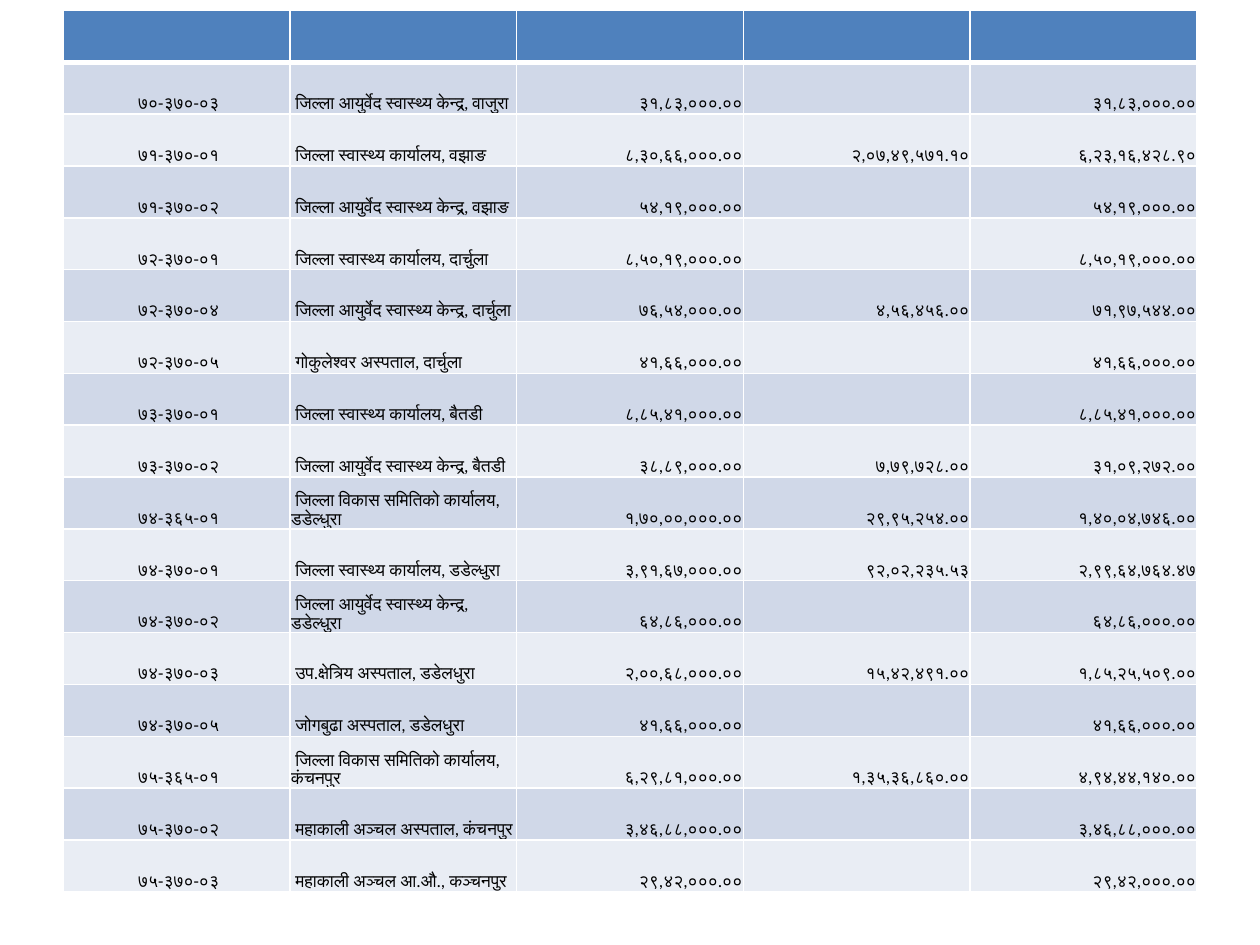
from lxml.etree import SubElement
from pptx import Presentation
from pptx.dml.color import RGBColor
from pptx.enum.text import MSO_VERTICAL_ANCHOR as Anchor, PP_PARAGRAPH_ALIGNMENT as Align
from pptx.oxml.ns import qn
from pptx.util import Pt

WHITE = RGBColor(0xFF, 0xFF, 0xFF)
BLACK = RGBColor(0x00, 0x00, 0x00)
HEADER_BLUE = RGBColor(0x4F, 0x81, 0xBD)
BAND_DARK = RGBColor(0xD0, 0xD8, 0xE8)
BAND_LIGHT = RGBColor(0xE9, 0xED, 0xF4)

NO_BREAK_SPACE = " "
ALIGNMENTS = [Align.CENTER, Align.LEFT, Align.RIGHT, Align.RIGHT, Align.RIGHT]
OFFICE_BUDGETS = [
    ("७०-३७०-०३", "जिल्ला आयुर्वेद स्वास्थ्य केन्द्र, वाजुरा", "३१,८३,०००.००", "", "३१,८३,०००.००"),
    ("७१-३७०-०१", "जिल्ला स्वास्थ्य कार्यालय, वझाङ", "८,३०,६६,०००.००", "२,०७,४९,५७१.१०", "६,२३,१६,४२८.९०"),
    ("७१-३७०-०२", "जिल्ला आयुर्वेद स्वास्थ्य केन्द्र, वझाङ", "५४,१९,०००.००", "", "५४,१९,०००.००"),
    ("७२-३७०-०१", "जिल्ला स्वास्थ्य कार्यालय, दार्चुला", "८,५०,१९,०००.००", "", "८,५०,१९,०००.००"),
    ("७२-३७०-०४", "जिल्ला आयुर्वेद स्वास्थ्य केन्द्र, दार्चुला", "७६,५४,०००.००", "४,५६,४५६.००", "७१,९७,५४४.००"),
    ("७२-३७०-०५", "गोकुलेश्वर अस्पताल, दार्चुला", "४१,६६,०००.००", "", "४१,६६,०००.००"),
    ("७३-३७०-०१", "जिल्ला स्वास्थ्य कार्यालय, बैतडी", "८,८५,४१,०००.००", "", "८,८५,४१,०००.००"),
    ("७३-३७०-०२", "जिल्ला आयुर्वेद स्वास्थ्य केन्द्र, बैतडी", "३८,८९,०००.००", "७,७९,७२८.००", "३१,०९,२७२.००"),
    ("७४-३६५-०१", "जिल्ला विकास समितिको कार्यालय, डडेल्धुरा", "१,७०,००,०००.००", "२९,९५,२५४.००", "१,४०,०४,७४६.००"),
    ("७४-३७०-०१", "जिल्ला स्वास्थ्य कार्यालय, डडेल्धुरा", "३,९१,६७,०००.००", "९२,०२,२३५.५३", "२,९९,६४,७६४.४७"),
    ("७४-३७०-०२", "जिल्ला आयुर्वेद स्वास्थ्य केन्द्र, डडेल्धुरा", "६४,८६,०००.००", "", "६४,८६,०००.००"),
    ("७४-३७०-०३", "उप.क्षेत्रिय अस्पताल, डडेलधुरा", "२,००,६८,०००.००", "१५,४२,४९१.००", "१,८५,२५,५०९.००"),
    ("७४-३७०-०५", "जोगबुढा अस्पताल, डडेलधुरा", "४१,६६,०००.००", "", "४१,६६,०००.००"),
    ("७५-३६५-०१", "जिल्ला विकास समितिको कार्यालय, कंचनपुर", "६,२९,८१,०००.००", "१,३५,३६,८६०.००", "४,९४,४४,१४०.००"),
    ("७५-३७०-०२", "महाकाली अञ्चल अस्पताल, कंचनपुर", "३,४६,८८,०००.००", "", "३,४६,८८,०००.००"),
    ("७५-३७०-०३", "महाकाली अञ्चल आ.औ., कञ्चनपुर", "२९,४२,०००.००", "", "२९,४२,०००.००"),
]


class BudgetSlide:
    font_format = {"name": "Calibri", "size": Pt(10), "bold": False}
    cell_format = {
        "margin_left": Pt(0.7),
        "margin_top": Pt(0.7),
        "margin_right": Pt(0.7),
        "margin_bottom": Pt(0),
        "vertical_anchor": Anchor.BOTTOM,
    }

    def __init__(self, presentation):
        self.slide = presentation.slides.add_slide(presentation.slide_layouts[6])

    def add_table(self, rows, left, top, width, height):
        frame = self.slide.shapes.add_table(len(rows), len(rows[0]), left, top, width, height)
        table = frame.table
        for row in table.rows:
            row.height = int(height / len(rows))
        for row_index, values in enumerate(rows):
            for column_index, value in enumerate(values):
                cell = table.cell(row_index, column_index)
                self.style_cell(cell, row_index)
                if value:
                    self.write_text(cell, value, ALIGNMENTS[column_index])

    def style_cell(self, cell, row_index):
        for name, value in self.cell_format.items():
            setattr(cell, name, value)
        top_width = 3 if row_index == 1 else 1
        bottom_width = 3 if row_index == 0 else 1
        self.add_borders(cell, {"lnL": 1, "lnR": 1, "lnT": top_width, "lnB": bottom_width})
        band = BAND_DARK if row_index % 2 else BAND_LIGHT
        cell.fill.solid()
        cell.fill.fore_color.rgb = band if row_index else HEADER_BLUE

    def add_borders(self, cell, widths):
        properties = cell._tc.get_or_add_tcPr()
        for side, width in widths.items():
            line = SubElement(properties, qn(f"a:{side}"), w=str(Pt(width)))
            fill = SubElement(line, qn("a:solidFill"))
            SubElement(fill, qn("a:srgbClr"), val=str(WHITE))

    def write_text(self, cell, text, alignment):
        paragraph = cell.text_frame.paragraphs[0]
        paragraph.alignment = alignment
        run = paragraph.add_run()
        run.text = NO_BREAK_SPACE + text
        for name, value in self.font_format.items():
            setattr(run.font, name, value)
        run.font.color.rgb = BLACK


def main():
    presentation = Presentation()
    presentation.slide_width = Pt(720)
    presentation.slide_height = Pt(540)
    header = ("",) * len(ALIGNMENTS)
    budget_slide = BudgetSlide(presentation)
    budget_slide.add_table([header, *OFFICE_BUDGETS], Pt(36), Pt(6), Pt(648), Pt(504))
    presentation.save("out.pptx")


if __name__ == "__main__":
    main()
